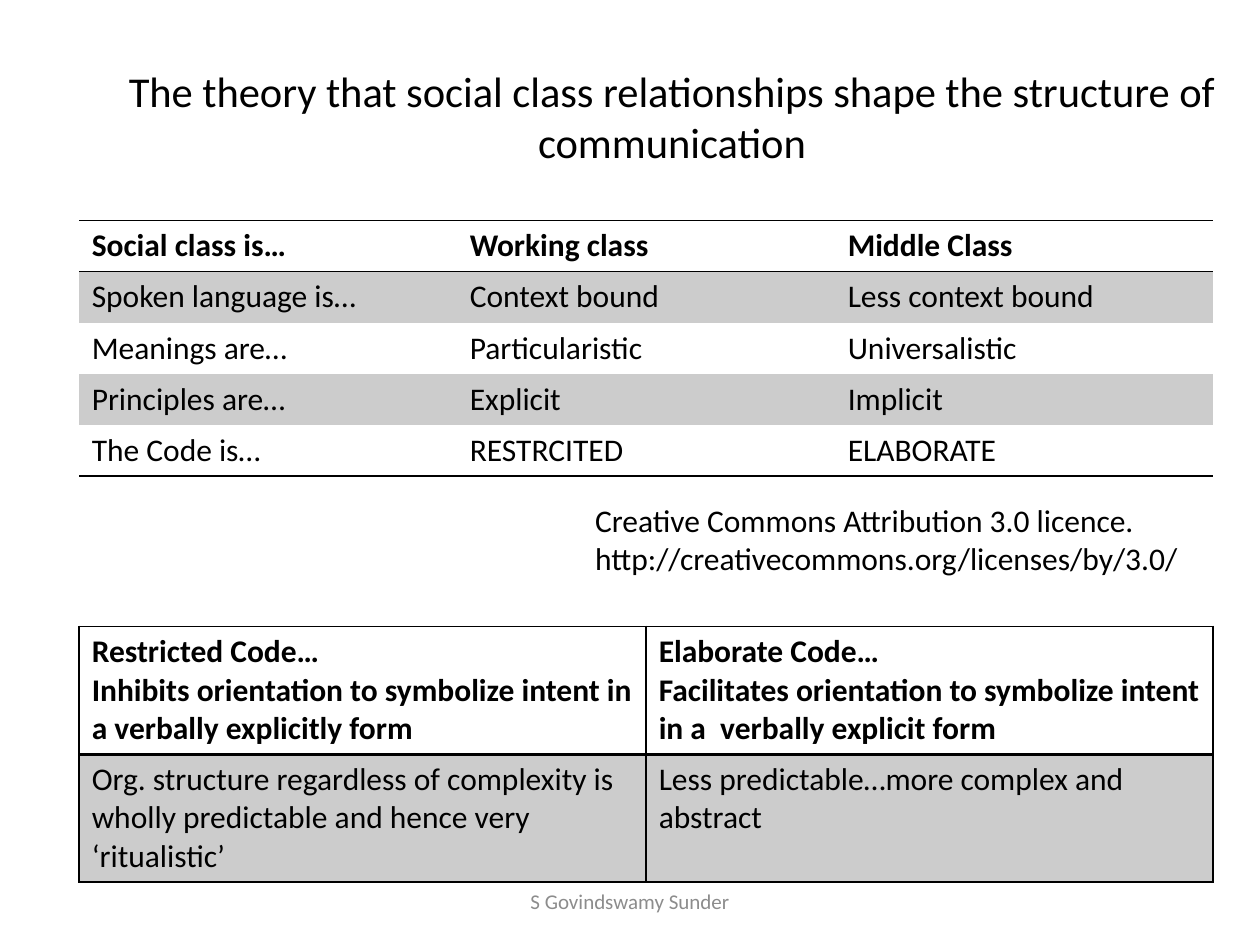
import pptx
import pptx.dml.color
import pptx.enum.text
import pptx.oxml
import pptx.oxml.ns
import pptx.util

Pt = pptx.util.Pt
Align = pptx.enum.text.PP_ALIGN
Anchor = pptx.enum.text.MSO_ANCHOR
NO_GRID_STYLE = "{2D5ABB26-0587-4C30-8999-92F81FD0307C}"


def color(hex_value):
    return pptx.dml.color.RGBColor.from_string(hex_value)


def write(frame, text, size, ink="000000", bold=False, align=Align.LEFT):
    frame.text = text
    for paragraph in frame.paragraphs:
        paragraph.alignment = align
        font_format = {"name": "Calibri", "size": Pt(size), "bold": bold}
        for key, value in font_format.items():
            setattr(paragraph.font, key, value)
        paragraph.font.color.rgb = color(ink)


deck = pptx.Presentation()
deck.slide_width, deck.slide_height = Pt(720), Pt(540)
slide = deck.slides.add_slide(deck.slide_layouts[6])

heading = "The theory that social class relationships shape the structure of communication"
licence = "Creative Commons Attribution 3.0 licence. http://creativecommons.org/licenses/by/3.0/"
texts = [
    (heading, (60, 21, 648, 90), 24.3, "000000", Align.CENTER, Anchor.MIDDLE),
    ("S Govindswamy Sunder", (246, 500.5, 228, 29), 12, "8C8C8C", Align.CENTER, Anchor.MIDDLE),
    (licence, (333, 283, 360, 51), 18, "000000", Align.LEFT, Anchor.TOP),
]
for text, bounds, size, ink, align, anchor in texts:
    frame = slide.shapes.add_textbox(*map(Pt, bounds)).text_frame
    for key, value in {"word_wrap": True, "vertical_anchor": anchor}.items():
        setattr(frame, key, value)
    write(frame, text, size, ink, align=align)

class_rows = [
    ("Social class is…", "Working class", "Middle Class"),
    ("Spoken language is…", "Context bound", "Less context bound"),
    ("Meanings are…", "Particularistic", "Universalistic"),
    ("Principles are…", "Explicit", "Implicit"),
    ("The Code is…", "RESTRCITED", "ELABORATE"),
]
code_rows = [
    (
        "Restricted Code…\nInhibits orientation to symbolize intent in a verbally explicitly form",
        "Elaborate Code…\nFacilitates orientation to symbolize intent in a  verbally explicit form",
    ),
    (
        "Org. structure regardless of complexity is wholly predictable and hence very ‘ritualistic’",
        "Less predictable…more complex and abstract",
    ),
]
class_borders = {0: {"T": 1, "B": 1}, 1: {"T": 1}, 4: {"B": 1}}
code_borders = {
    0: {"L": 1, "R": 1, "T": 1, "B": 2},
    1: {"L": 1, "R": 1, "T": 2, "B": 1},
}
tables = [
    (class_rows, 126, 29.25, class_borders),
    (code_rows, 358, 73, code_borders),
]
for rows, top, row_height, borders in tables:
    columns = len(rows[0])
    table = slide.shapes.add_table(
        len(rows), columns, Pt(45.25), Pt(top), Pt(648), Pt(row_height * len(rows))
    ).table
    table.horz_banding = False
    table._tbl.tblPr.find(pptx.oxml.ns.qn("a:tableStyleId")).text = NO_GRID_STYLE
    for column in table.columns:
        column.width = Pt(648 / columns)
    for row_index, labels in enumerate(rows):
        table.rows[row_index].height = Pt(row_height)
        for column_index, label in enumerate(labels):
            cell = table.cell(row_index, column_index)
            write(cell.text_frame, label, 18, bold=row_index == 0)
            cell_borders = borders.get(row_index, {})
            for side in "LRTB":
                width = cell_borders.get(side, 0)
                paint = (
                    '<a:solidFill><a:srgbClr val="000000"/></a:solidFill>'
                    if width else "<a:noFill/>"
                )
                cell._tc.get_or_add_tcPr().append(pptx.oxml.parse_xml(
                    f'<a:ln{side} {pptx.oxml.ns.nsdecls("a")} w="{Pt(width)}">'
                    f"{paint}</a:ln{side}>"
                ))
            if row_index % 2:
                cell.fill.solid()
                cell.fill.fore_color.rgb = color("CCCCCC")
            else:
                cell.fill.background()

deck.save("out.pptx")
